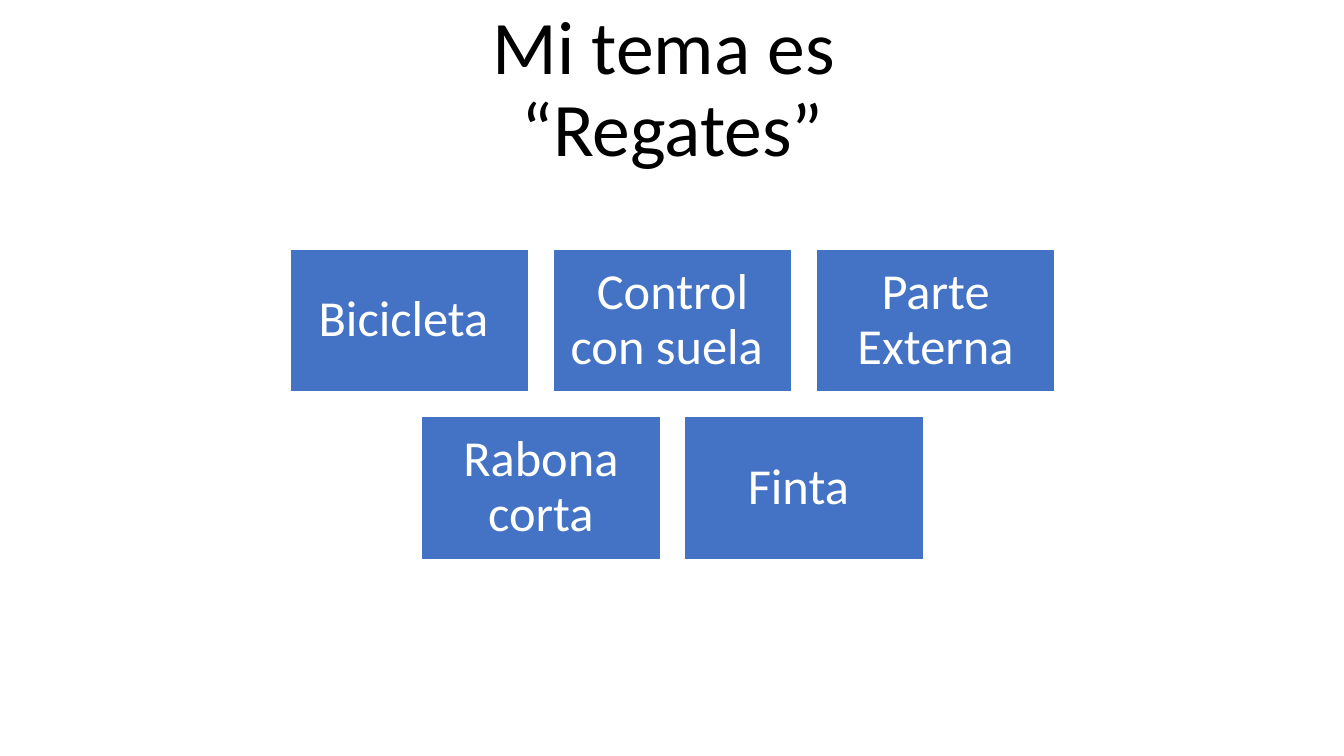
from pptx import Presentation
from pptx.dml.color import RGBColor
from pptx.enum import shapes, text
from pptx.util import Inches, Pt

BLACK = RGBColor(0x00, 0x00, 0x00)
WHITE = RGBColor(0xFF, 0xFF, 0xFF)
BLUE = RGBColor(0x44, 0x72, 0xC4)
FONT = "Calibri"

TITLE_LINES = ["Mi tema es ", "“Regates”"]
DRIBBLE_ROWS = [
    ["Bicicleta ", "Control con suela ", "Parte Externa"],
    ["Rabona corta", "Finta "],
]
TILE_WIDTH, TILE_HEIGHT, GAP = 2.37, 1.42, 0.24


def write_centred(frame, lines, size, color):
    """Write the lines as one centred paragraph."""
    frame.word_wrap = True
    para = frame.paragraphs[0]
    para.alignment = text.PP_ALIGN.CENTER
    para.line_spacing = 0.9
    for index, line in enumerate(lines):
        if index:
            para.add_line_break()
        span = para.add_run()
        span.text = line
        span.font.name = FONT
        span.font.size = Pt(size)
        span.font.color.rgb = color


def add_title(page, left, top, width, height):
    box = page.shapes.add_textbox(*map(Inches, (left, top, width, height)))
    box.text_frame.vertical_anchor = text.MSO_ANCHOR.BOTTOM
    write_centred(box.text_frame, TITLE_LINES, 54, BLACK)


def add_tile(page, left, top, label):
    tile = page.shapes.add_shape(
        shapes.MSO_SHAPE.RECTANGLE,
        *map(Inches, (left, top, TILE_WIDTH, TILE_HEIGHT)))
    tile.shadow.inherit = False
    tile.fill.solid()
    tile.fill.fore_color.rgb = BLUE
    tile.line.color.rgb = WHITE
    tile.line.width = Pt(1)
    frame = tile.text_frame
    frame.margin_left = frame.margin_right = Inches(0.15)
    frame.margin_top = frame.margin_bottom = Inches(0.15)
    frame.vertical_anchor = text.MSO_ANCHOR.MIDDLE
    write_centred(frame, [label], 36, WHITE)


def add_tile_rows(page, left, top, width):
    """Centre each row of tiles within the given width."""
    for row, labels in enumerate(DRIBBLE_ROWS):
        row_width = len(labels) * (TILE_WIDTH + GAP) - GAP
        start = left + (width - row_width) / 2
        for column, label in enumerate(labels):
            add_tile(page, start + column * (TILE_WIDTH + GAP),
                     top + row * (TILE_HEIGHT + GAP), label)


def main():
    deck = Presentation()
    deck.slide_width, deck.slide_height = Inches(13.33), Inches(7.5)
    page = deck.slides.add_slide(deck.slide_layouts[6])
    add_title(page, 1.67, 0, 10, 1.76)
    add_tile_rows(page, 1.67, 2.47, 10)
    deck.save("out.pptx")


if __name__ == "__main__":
    main()
